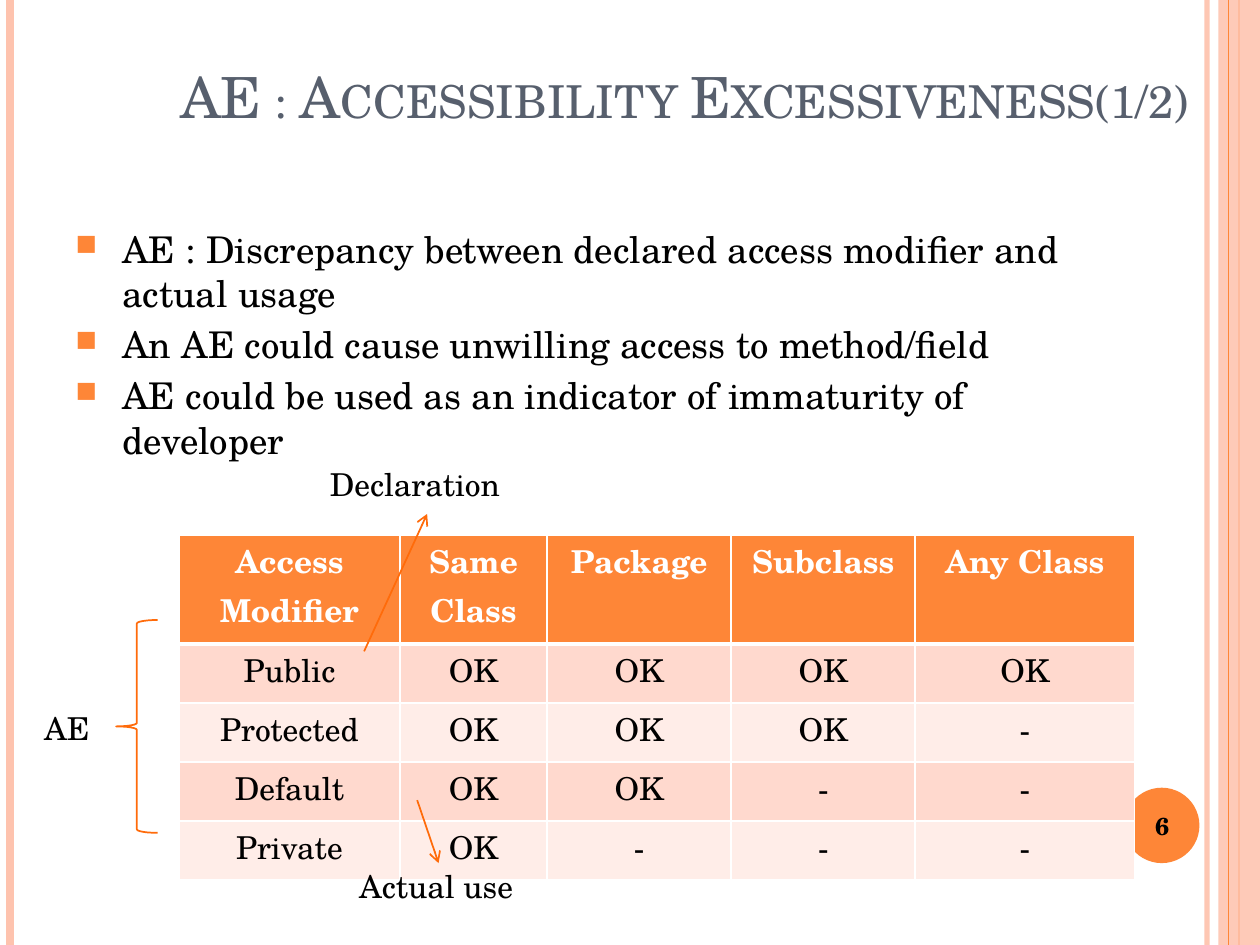
from lxml import etree
from pptx import Presentation
from pptx import util as u
from pptx.dml.color import RGBColor
from pptx.enum import shapes, text
from pptx.oxml.ns import qn

# Content
TITLE = "AE : Accessibility Excessiveness(1/2)"
POINTS = [
    "AE : Discrepancy between declared access modifier and actual usage",
    "An AE could cause unwilling access to method/field",
    "AE could be used as an indicator of immaturity of developer",
]
PAGE = "6"
SCOPES = ["Access Modifier", "Same Class", "Package", "Subclass", "Any Class"]
MODIFIERS = ["Public", "Protected", "Default", "Private"]  # each allows one scope fewer
LABELS = [  # text, left, top, width
    ("Declaration", 6.4, 9.25, 4.45),
    ("Actual use", 6.99, 17.35, 5.92),
    ("AE", 0.64, 14.17, 1.7),
]
ARROWS = [(7.34, 13.13, 8.61, 10.36), (8.41, 16.13, 8.84, 17.4)]
COLUMNS = [4.45, 2.97, 3.71, 3.71, 4.42]
HEADER_HEIGHT, ROW_HEIGHT = 2.18, 1.19
WIDTH, HEIGHT = 25.4, 19.05

THEME = {
    "font": "TeX Gyre Schola",
    "title": "575F6D", "ink": "000000", "paper": "FFFFFF",
    "accent": "FE8637", "pale": "FEC3AE", "mark": "FF6B0A",
    "bands": ["FFD9CE", "FFEDE8"],
    "title_size": 32.4, "body_size": 21, "label_size": 18, "page_size": 14,
}
STRIPES = [  # x, colour, weight, opacity
    (24.33, THEME["pale"], 3, 93),
    (0.21, THEME["pale"], 4.5, 100),
    (24.98, THEME["accent"], 1.5, 100),
]

deck = Presentation()
deck.slide_width, deck.slide_height = u.Cm(WIDTH), u.Cm(HEIGHT)
slide = deck.slides.add_slide(deck.slide_layouts[6])


def rgb(value):
    return RGBColor.from_string(value)


def add_xml(parent, tag, **attributes):
    return etree.SubElement(parent, qn(tag), **attributes)


def set_opacity(fill_parent, percent):
    colour = next(fill_parent.iter(qn("a:srgbClr")))
    add_xml(colour, "a:alpha", val=str(percent * 1000))


def style(paragraph, size, colour, bold=False):
    for run in paragraph.runs:
        run.font.name = THEME["font"]
        run.font.size = u.Pt(size)
        run.font.bold = bold
        run.font.color.rgb = rgb(colour)


def write(words, left, top, width, height, size, colour=THEME["ink"], bold=False):
    box = slide.shapes.add_textbox(*map(u.Cm, (left, top, width, height)))
    frame = box.text_frame
    frame.word_wrap = True
    frame.text = words
    for paragraph in frame.paragraphs:
        style(paragraph, size, colour, bold)
    return frame


def draw_line(x1, y1, x2, y2, colour, weight):
    line = slide.shapes.add_connector(
        shapes.MSO_CONNECTOR.STRAIGHT, *map(u.Cm, (x1, y1, x2, y2)))
    line.line.color.rgb = rgb(colour)
    line.line.width = u.Pt(weight)
    add_xml(line._element.spPr, "a:effectLst")
    return line


def draw_shape(kind, left, top, width, height, fill=None, outline=None):
    shape = slide.shapes.add_shape(kind, *map(u.Cm, (left, top, width, height)))
    shape.shadow.inherit = False
    if fill:
        shape.fill.solid()
        shape.fill.fore_color.rgb = rgb(fill)
    else:
        shape.fill.background()
    if outline:
        shape.line.color.rgb = rgb(outline)
        shape.line.width = u.Pt(1)
    else:
        shape.line.fill.background()
    return shape


def set_borders(cell, bottom):
    properties = cell._tc.get_or_add_tcPr()
    weights = {"a:lnL": 1, "a:lnR": 1, "a:lnT": 1, "a:lnB": bottom}
    for position, (tag, weight) in enumerate(weights.items()):
        border = etree.Element(qn(tag), w=str(u.Pt(weight)))
        add_xml(add_xml(border, "a:solidFill"), "a:srgbClr", val=THEME["paper"])
        properties.insert(position, border)


# Edge stripes and page disc
for x, colour, weight, opacity in STRIPES:
    stripe = draw_line(x, 0, x, HEIGHT, colour, weight)
    if opacity < 100:
        set_opacity(stripe._element.spPr, opacity)
band = draw_shape(shapes.MSO_SHAPE.RECTANGLE, 24.56, 0, 0.84, HEIGHT, THEME["pale"])
set_opacity(band._element.spPr, 87)
draw_line(24.77, 0, 24.77, HEIGHT, THEME["accent"], 0.75)
draw_shape(shapes.MSO_SHAPE.OVAL, 22.66, 15.88, 1.52, 1.52, THEME["accent"])

# Title
title = write(TITLE, 3.38, 0.33, 21.92, 2.41, THEME["title_size"], THEME["title"])
title.vertical_anchor = text.MSO_ANCHOR.BOTTOM
title.paragraphs[0].runs[0].font._element.set("cap", "small")

# Bullet points
body = write("\n".join(POINTS), 1.27, 4.45, 20.75, 13.54, THEME["body_size"])
for point in body.paragraphs:
    point.space_before = u.Pt(4)
    layout = point._p.get_or_add_pPr()
    layout.set("marL", str(u.Cm(0.95)))
    layout.set("indent", str(u.Cm(-0.95)))
    add_xml(add_xml(layout, "a:buClr"), "a:srgbClr", val=THEME["accent"])
    add_xml(layout, "a:buSzPct", val="80000")
    add_xml(layout, "a:buChar", char="■")

# Page number
page = write(PAGE, 22.58, 15.93, 1.7, 1.45, THEME["page_size"], bold=True)
page.vertical_anchor = text.MSO_ANCHOR.MIDDLE
page.paragraphs[0].alignment = text.PP_ALIGN.CENTER

# Access table
grid = [SCOPES]
for step, modifier in enumerate(MODIFIERS):
    grid.append([modifier] + ["OK"] * (4 - step) + ["-"] * step)
heights = [HEADER_HEIGHT] + [ROW_HEIGHT] * len(MODIFIERS)
table = slide.shapes.add_table(
    len(grid), len(COLUMNS), u.Cm(3.61), u.Cm(10.8),
    u.Cm(sum(COLUMNS)), u.Cm(sum(heights))).table
for column, width in zip(table.columns, COLUMNS):
    column.width = u.Cm(width)
for r, entries in enumerate(grid):
    table.rows[r].height = u.Cm(heights[r])
    header = r == 0
    for c, entry in enumerate(entries):
        cell = table.cell(r, c)
        cell.text = entry
        cell.margin_top = 0
        cell.fill.solid()
        cell.fill.fore_color.rgb = rgb(THEME["accent"] if header else THEME["bands"][(r - 1) % 2])
        set_borders(cell, 3 if header else 1)
        paragraph = cell.text_frame.paragraphs[0]
        paragraph.alignment = text.PP_ALIGN.CENTER
        paragraph.line_spacing = u.Pt(28)
        style(paragraph, THEME["label_size"], THEME["paper" if header else "ink"], header)

# Annotations: arrows, labels and brace
for ends in ARROWS:
    arrow = draw_line(*ends, THEME["mark"], 1)
    add_xml(arrow.line._get_or_add_ln(), "a:tailEnd", type="arrow")
for words, left, top, width in LABELS:
    write(words, left, top, width, 1.02, THEME["label_size"])
draw_shape(shapes.MSO_SHAPE.LEFT_BRACE, 2.34, 12.5, 0.84, 4.29, outline=THEME["mark"])

deck.save("out.pptx")
